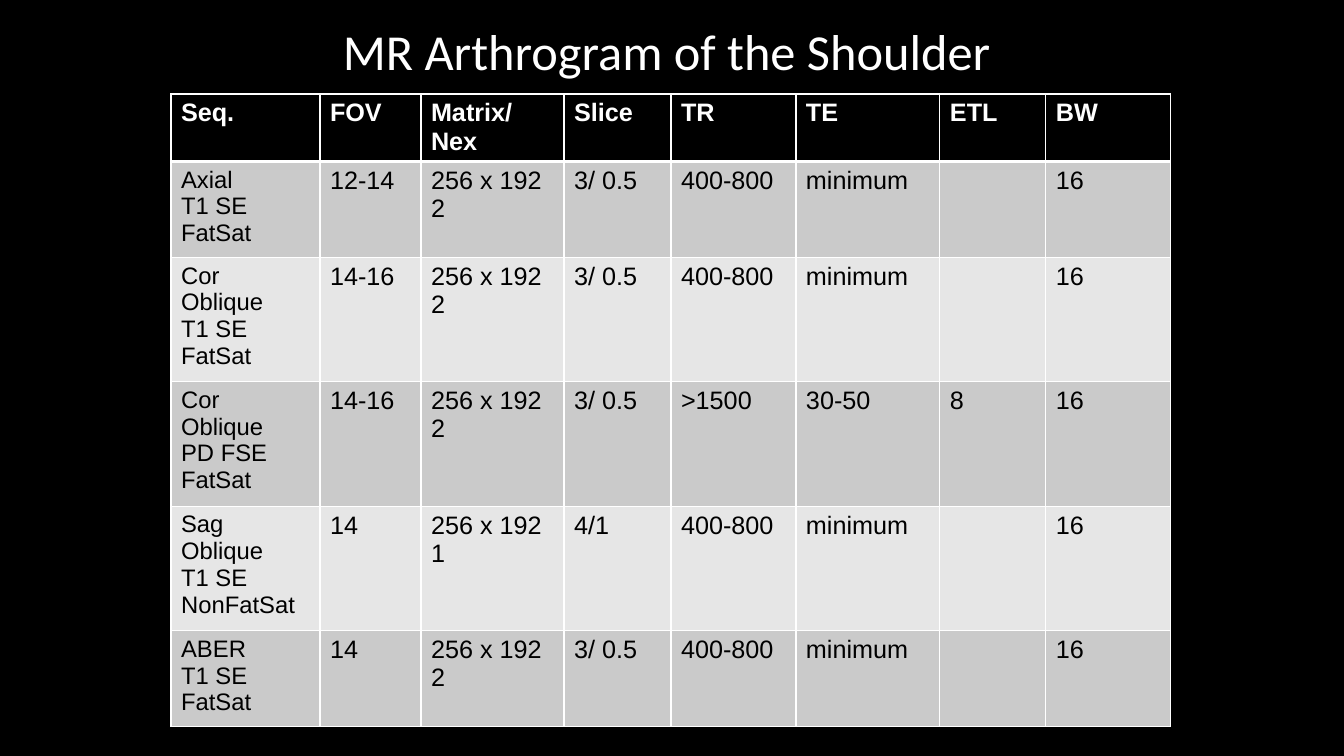
from lxml import etree
from pptx import Presentation
from pptx.dml.color import RGBColor
from pptx.enum.text import MSO_ANCHOR, PP_ALIGN
from pptx.oxml.ns import qn
from pptx.util import Emu, Pt

BLACK = RGBColor(0x00, 0x00, 0x00)
WHITE = RGBColor(0xFF, 0xFF, 0xFF)
DARK_BAND = RGBColor(0xCA, 0xCA, 0xCA)
LIGHT_BAND = RGBColor(0xE6, 0xE6, 0xE6)

COL_WIDTHS = [149, 101, 143, 107, 125, 144, 106, 125]
ROW_HEIGHTS = [66, 93, 121, 122, 121, 94]
ROWS = [
    ["Seq.", "FOV", "Matrix/\nNex", "Slice", "TR", "TE", "ETL", "BW"],
    ["Axial\nT1 SE\nFatSat", "12-14", "256 x 192\n2", "3/ 0.5", "400-800", "minimum", "", "16"],
    ["Cor\nOblique\nT1 SE\nFatSat", "14-16", "256 x 192\n2", "3/ 0.5", "400-800", "minimum", "", "16"],
    ["Cor\nOblique\nPD FSE\nFatSat", "14-16", "256 x 192\n2", "3/ 0.5", ">1500", "30-50", "8", "16"],
    ["Sag\nOblique\nT1 SE\nNonFatSat", "14", "256 x 192\n1", "4/1", "400-800", "minimum", "", "16"],
    ["ABER\nT1 SE\nFatSat", "14", "256 x 192\n2", "3/ 0.5", "400-800", "minimum", "", "16"],
]


def px(n):
    """Turn pixels (100.8 to the inch) into EMU."""
    return Emu(round(n * 914400 / 100.8))


def add_border(cell, side, width):
    ln = etree.SubElement(cell._tc.get_or_add_tcPr(), qn(f"a:ln{side}"), w=str(Pt(width)))
    fill = etree.SubElement(ln, qn("a:solidFill"))
    etree.SubElement(fill, qn("a:srgbClr"), val=str(WHITE))


prs = Presentation()
prs.slide_width, prs.slide_height = px(1344), px(756)
s = prs.slides.add_slide(prs.slide_layouts[6])
s.background.fill.solid()
s.background.fill.fore_color.rgb = BLACK

# Title
tf = s.shapes.add_textbox(px(93), px(-19), px(1159), px(146)).text_frame
tf.word_wrap = True
tf.vertical_anchor = MSO_ANCHOR.MIDDLE
p = tf.paragraphs[0]
p.text = "MR Arthrogram of the Shoulder "
p.alignment = PP_ALIGN.CENTER
p.line_spacing = 0.9
p.font.name, p.font.size = "Calibri", Pt(36)
p.font.color.rgb = WHITE

# Protocol table
table = s.shapes.add_table(len(ROWS), len(COL_WIDTHS), px(171), px(94),
                           px(sum(COL_WIDTHS)), px(sum(ROW_HEIGHTS))).table
table.horz_banding = False
for column, width in zip(table.columns, COL_WIDTHS):
    column.width = px(width)
for row, height in zip(table.rows, ROW_HEIGHTS):
    row.height = px(height)

for i, texts in enumerate(ROWS):
    header = i == 0
    band = BLACK if header else DARK_BAND if i % 2 else LIGHT_BAND
    for j, text in enumerate(texts):
        cell = table.cell(i, j)
        if header:
            cell.margin_bottom = px(2)
        for side in "LRTB":
            under_header = (i, side) in [(0, "B"), (1, "T")]
            add_border(cell, side, 3 if under_header else 1)
        cell.fill.solid()
        cell.fill.fore_color.rgb = band
        cell.text = text
        for p in cell.text_frame.paragraphs:
            p.font.name = "Arial"
            p.font.size = Pt(17 if j == 0 and not header else 18)
            p.font.bold = header
            p.font.color.rgb = WHITE if header else BLACK

prs.save("out.pptx")
